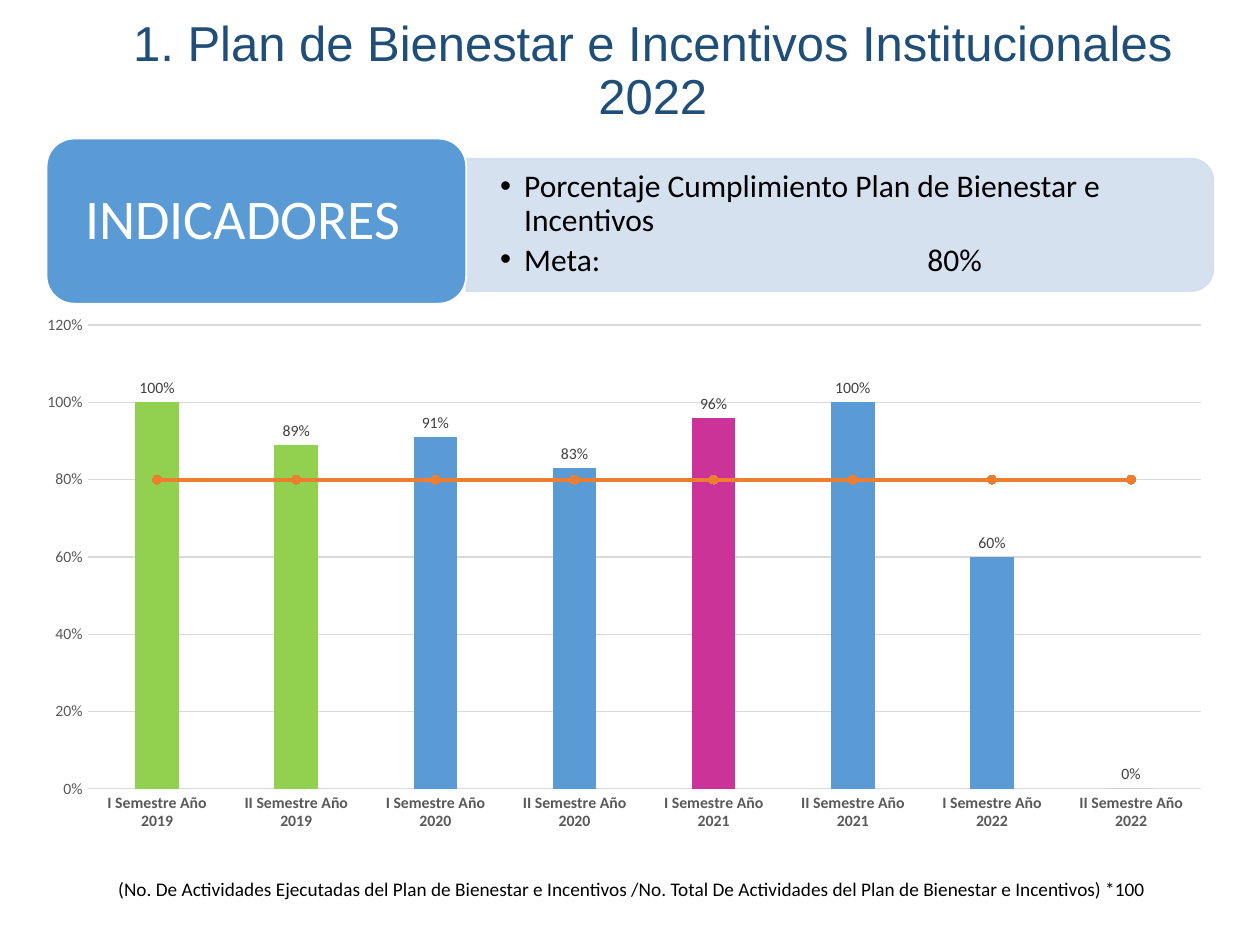
from lxml import etree
from pptx import Presentation
from pptx.chart.data import CategoryChartData
from pptx.dml.color import RGBColor
from pptx.enum.chart import XL_CHART_TYPE, XL_LABEL_POSITION, XL_MARKER_STYLE, XL_TICK_MARK
from pptx.enum.shapes import MSO_SHAPE
from pptx.enum.text import MSO_ANCHOR, PP_ALIGN
from pptx.oxml import parse_xml
from pptx.oxml.ns import nsdecls, qn
from pptx.util import Inches, Pt

COLUMNS = XL_CHART_TYPE.COLUMN_CLUSTERED
OUTSIDE = XL_LABEL_POSITION.OUTSIDE_END
CIRCLE = XL_MARKER_STYLE.CIRCLE
NO_TICK = XL_TICK_MARK.NONE
ROUNDED = MSO_SHAPE.ROUNDED_RECTANGLE
ROUNDED_TOP = MSO_SHAPE.ROUND_2_SAME_RECTANGLE
MIDDLE, TOP = MSO_ANCHOR.MIDDLE, MSO_ANCHOR.TOP
CENTER, LEFT = PP_ALIGN.CENTER, PP_ALIGN.LEFT

WIDTH, HEIGHT = 10, 7.5
BLUE, GREEN, PINK, ORANGE = "5B9BD5", "92D050", "CC3399", "ED7D31"
PALE, GREY, GRID = "D2DEEF", "595959", "D9D9D9"
BODY_FONT = "Calibri"
EXECUTED = [1, 0.89, 0.91, 0.83, 0.96, 1, 0.6, 0]
GOAL = 0.8
HIGHLIGHTS = {0: GREEN, 1: GREEN, 4: PINK}


def color(code):
    """Turn a hex string into a colour."""
    return RGBColor.from_string(code)


def area(left, top, width, height):
    """Turn inches into the four lengths of a frame."""
    return [Inches(value) for value in (left, top, width, height)]


def set_font(font, size, code, name=BODY_FONT, bold=False):
    """Give a font its size, colour, typeface and weight."""
    font.size, font.name, font.bold = Pt(size), name, bold
    font.color.rgb = color(code)


def set_line(line, code, width):
    """Give a line its colour and width."""
    line.color.rgb = color(code)
    line.width = Pt(width)


def add_bullet(para, indent, tab):
    """Give a paragraph a round bullet and one tab stop."""
    props = para._p.get_or_add_pPr()
    props.set("marL", str(Inches(indent)))
    props.set("indent", str(-Inches(indent)))
    etree.SubElement(props, qn("a:buFont"), typeface="Arial")
    etree.SubElement(props, qn("a:buChar"), char="•")
    stops = etree.SubElement(props, qn("a:tabLst"))
    etree.SubElement(stops, qn("a:tab"), pos=str(Inches(tab)), algn="l")


def write(box, lines, size, code, name=BODY_FONT, align=LEFT, anchor=MIDDLE,
          insets=(0.1, 0.05, 0.1, 0.05), spacing=0.9, bullets=False):
    """Fill a shape with one paragraph for each line."""
    frame = box.text_frame
    frame.word_wrap = True
    frame.vertical_anchor = anchor
    (frame.margin_left, frame.margin_top,
     frame.margin_right, frame.margin_bottom) = area(*insets)
    for index, line in enumerate(lines):
        para = frame.paragraphs[0] if index == 0 else frame.add_paragraph()
        if bullets:
            add_bullet(para, 0.19, 3.39)
            para.space_after = Pt(3)
        para.alignment, para.line_spacing = align, spacing
        span = para.add_run()
        span.text = line
        set_font(span.font, size, code, name)


def add_text(page, place, lines, size, code, **options):
    """Add a text box with its text."""
    write(page.shapes.add_textbox(*area(*place)), lines, size, code, **options)


def add_panel(page, kind, place, fill, edge):
    """Add a filled shape with a thin edge."""
    panel = page.shapes.add_shape(kind, *area(*place))
    panel.shadow.inherit = False
    panel.fill.solid()
    panel.fill.fore_color.rgb = color(fill)
    set_line(panel.line, edge, 1)
    return panel


def make_translucent(panel, percent):
    """Set the opacity of a panel's fill and edge."""
    for tone in panel._element.spPr.iter(qn("a:srgbClr")):
        etree.SubElement(tone, qn("a:alpha"), val=str(percent * 1000))


def move_goal_to_line(chart):
    """Move the second column series into a line plot on the same axes."""
    columns = chart.plots[0]._element
    goal = columns.findall(qn("c:ser"))[1]
    for flag in goal.findall(qn("c:invertIfNegative")):
        goal.remove(flag)
    line = parse_xml(f'<c:lineChart {nsdecls("c")}><c:grouping val="stacked"/>'
                     '<c:varyColors val="0"/></c:lineChart>')
    line.append(goal)
    etree.SubElement(line, qn("c:marker"), val="1")
    for axis in columns.findall(qn("c:axId")):
        etree.SubElement(line, qn("c:axId"), val=axis.get("val"))
    columns.addnext(line)


def set_plot_area(chart, **shares):
    """Place the inner plot area by shares of the chart's size."""
    plot_area = chart._chartSpace.find(qn("c:chart")).find(qn("c:plotArea"))
    for old in plot_area.findall(qn("c:layout")):
        plot_area.remove(old)
    layout = parse_xml(f'<c:layout {nsdecls("c")}><c:manualLayout>'
                       '<c:layoutTarget val="inner"/><c:xMode val="edge"/>'
                       '<c:yMode val="edge"/></c:manualLayout></c:layout>')
    for key, share in shares.items():
        etree.SubElement(layout[0], qn(f"c:{key}"), val=str(share))
    plot_area.insert(0, layout)


def style_columns(plot):
    """Colour the columns and label them with their values."""
    plot.gap_width, plot.overlap, plot.vary_by_categories = 219, -27, False
    series = plot.series[0]
    series.format.fill.solid()
    series.format.fill.fore_color.rgb = color(BLUE)
    for index, code in HIGHLIGHTS.items():
        fill = series.points[index].format.fill
        fill.solid()
        fill.fore_color.rgb = color(code)
    labels = series.data_labels
    labels.show_value, labels.position = True, OUTSIDE
    labels.number_format, labels.number_format_is_linked = "0%", False
    set_font(labels.font, 9, "404040")


def style_goal(series):
    """Draw the goal as a line with round markers."""
    series.smooth = False
    set_line(series.format.line, ORANGE, 2.25)
    marker = series.marker
    marker.style, marker.size = CIRCLE, 5
    marker.format.fill.solid()
    marker.format.fill.fore_color.rgb = color(ORANGE)
    set_line(marker.format.line, ORANGE, 0.75)


def style_axes(chart):
    """Format both axes and the gridlines."""
    categories, values = chart.category_axis, chart.value_axis
    for axis, bold in ((categories, True), (values, False)):
        axis.major_tick_mark = axis.minor_tick_mark = NO_TICK
        set_font(axis.tick_labels.font, 9, GREY, bold=bold)
    set_line(categories.format.line, GRID, 0.75)
    values.minimum_scale, values.maximum_scale, values.major_unit = 0, 1.2, 0.2
    values.tick_labels.number_format = "0%"
    values.tick_labels.number_format_is_linked = False
    values.format.line.fill.background()
    set_line(values.major_gridlines.format.line, GRID, 0.75)


def add_progress_chart(page, place):
    """Add the columns of compliance by semester with the goal line."""
    data = CategoryChartData(number_format="0%")
    data.categories = [f"{half} Semestre Año {year}"
                       for year in range(2019, 2023) for half in ("I", "II")]
    data.add_series("Cumplimiento", EXECUTED)
    data.add_series("Meta", [GOAL] * len(EXECUTED))
    chart = page.shapes.add_chart(COLUMNS, *area(*place), data).chart
    chart.has_title = chart.has_legend = False
    set_font(chart.font, 10, "000000")
    move_goal_to_line(chart)
    set_plot_area(chart, x=0.05, y=0.04, w=0.93, h=0.86)
    style_columns(chart.plots[0])
    style_goal(chart.plots[1].series[0])
    style_axes(chart)


def main():
    """Build the slide and save it."""
    deck = Presentation()
    deck.slide_width, deck.slide_height = Inches(WIDTH), Inches(HEIGHT)
    page = deck.slides.add_slide(deck.slide_layouts[6])
    add_text(page, (0.87, 0.21, 8.62, 0.72),
             ["1. Plan de Bienestar e Incentivos Institucionales 2022"],
             28, "1F4E79", name="Arial", align=CENTER)
    band = add_panel(page, ROUNDED_TOP, (6.14, -1.18, 1.05, 5.93), PALE, PALE)
    band.rotation = 90
    make_translucent(band, 90)
    add_text(page, (3.7, 1.31, 5.88, 0.94),
             ["Porcentaje Cumplimiento Plan de Bienestar e Incentivos", "Meta:\t80%"],
             18, "000000", insets=(0.27, 0.14, 0.27, 0.14), bullets=True)
    heading = add_panel(page, ROUNDED, (0.37, 1.1, 3.33, 1.31), BLUE, "FFFFFF")
    write(heading, ["INDICADORES"], 32, "FFFFFF", align=CENTER,
          insets=(0.13, 0.07, 0.34, 0.07))
    add_text(page, (0.84, 6.91, 8.5, 0.29),
             ["(No. De Actividades Ejecutadas del Plan de Bienestar e Incentivos /"
              "No. Total De Actividades del Plan de Bienestar e Incentivos) *100"],
             11, "000000", anchor=TOP, spacing=1)
    add_progress_chart(page, (0.22, 2.41, 9.5, 4.28))
    deck.save("out.pptx")


if __name__ == "__main__":
    main()
